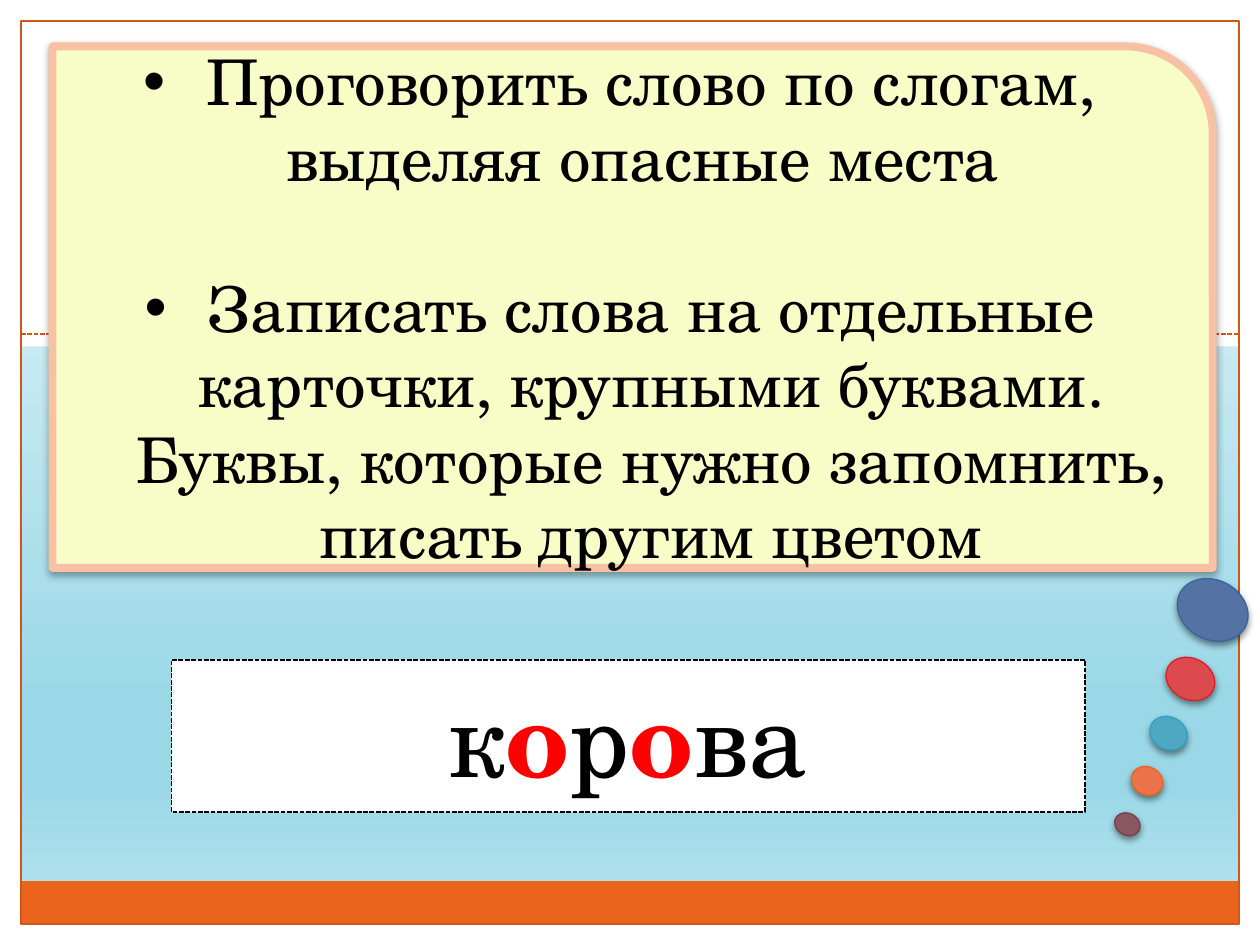
from lxml import etree
from pptx import Presentation
from pptx.dml.color import RGBColor
from pptx.enum import dml, shapes, text
from pptx.oxml import ns
from pptx.util import Pt

FONT = "TeX Gyre Schola"
HUES = {
    "white": "FFFFFF", "black": "000000", "red": "FF0000",
    "rust": "CF5818", "band": "EB641B", "cream": "F8FCC6", "peach": "F7C1A4",
}
SKY = [(0, "F4FBFC"), (74, "9BD8E7"), (83, "9BD8E7"), (100, "BCE5EF")]
# left, top, width, height, fill, line
DOTS = [
    (38, 0, 34, 42, "5572A4", "39639D"),
    (30.5, 46, 23.5, 29, "DC4A4D", "DA1F28"),
    (20.5, 80.5, 18.5, 22, "4FA8C3", "2DA2BF"),
    (9.5, 109.5, 16, 18.5, "EC7349", "EB641B"),
    (0, 136, 12.5, 15, "885760", "7D3C4A"),
]
TIPS = [
    "Проговорить слово по слогам, выделяя опасные места ",
    "Записать слова на отдельные карточки, крупными буквами. "
    "Буквы, которые нужно запомнить, писать другим цветом",
]
WORD = [("к", False), ("о", True), ("р", False), ("о", True), ("ва", False)]
KIND = shapes.MSO_SHAPE


def rgb(hue):
    return RGBColor.from_string(HUES.get(hue, hue))


def node(parent, tag, **attrs):
    return etree.SubElement(parent, ns.qn(tag), {k: str(v) for k, v in attrs.items()})


def stroke(line, hue, width, dash=False):
    line.color.rgb = rgb(hue)
    line.width = Pt(width)
    if dash:
        line.dash_style = dml.MSO_LINE.SQUARE_DOT


def draw(host, kind, box, fill=None, line=None):
    """Add a shape; line holds hue, width and optionally a dash flag."""
    shape = host.add_shape(kind, *map(Pt, box))
    shape.shadow.inherit = False
    if fill:
        shape.fill.solid()
        shape.fill.fore_color.rgb = rgb(fill)
    else:
        shape.fill.background()
    if line:
        stroke(shape.line, *line)
    else:
        shape.line.fill.background()
    return shape


def shade(shape, alpha):
    """Drop a soft shadow straight down; alpha is in percent."""
    fx = shape._element.spPr.find(ns.qn("a:effectLst"))
    drop = node(fx, "a:outerShdw", blurRad=Pt(4), dist=Pt(2), dir=5400000, rotWithShape=0)
    tint = node(drop, "a:srgbClr", val=HUES["black"])
    node(tint, "a:alpha", val=alpha * 1000)


def style(run, size, hue="black", bold=False):
    run.font.name = FONT
    run.font.size = Pt(size)
    run.font.bold = bold
    run.font.color.rgb = rgb(hue)


def paint_sky(slide):
    fill = slide.background.fill
    fill.gradient()
    fill.gradient_angle = 270
    stops = next(slide._element.iter(ns.qn("a:gsLst")))
    for stop in list(stops):
        stops.remove(stop)
    for pos, hue in SKY:
        node(node(stops, "a:gs", pos=pos * 1000), "a:srgbClr", val=hue)


def add_frame(slide, box):
    left, top, width, height = box
    host, edge = slide.shapes, 12
    right, base = left + width, top + height
    for strip in [
        (left, base - edge, width, edge),
        (right - edge, top, edge, height),
        (left, top, edge, height),
        (left, top, width, 198),
    ]:
        draw(host, KIND.RECTANGLE, strip, "white")
    inner = width - 2 * edge
    draw(host, KIND.RECTANGLE, (left + edge, base - edge - 24.5, inner, 24.5), "band")
    rule = host.add_connector(
        shapes.MSO_CONNECTOR.STRAIGHT,
        Pt(left + edge), Pt(top + 191), Pt(right - edge), Pt(top + 191))
    stroke(rule.line, "rust", 0.9, True)
    node(rule._element.spPr, "a:effectLst")
    rim = (left + edge, top + edge, inner, height - 2 * edge)
    draw(host, KIND.RECTANGLE, rim, line=("rust", 0.75))


def add_tips(slide, box):
    card = draw(slide.shapes, KIND.ROUND_1_RECTANGLE, box, "cream", ("peach", 4.5))
    shade(card, 35)
    frame = card.text_frame
    frame.word_wrap = True
    frame.vertical_anchor = text.MSO_ANCHOR.MIDDLE
    frame.text = "\n".join(TIPS)
    for para in frame.paragraphs:
        para.alignment = text.PP_ALIGN.CENTER
        props = para._p.get_or_add_pPr()
        props.set("marL", str(Pt(36)))
        props.set("indent", str(-Pt(36)))
        node(props, "a:buFont", typeface="Arial")
        node(props, "a:buChar", char="•")
        style(para.runs[0], 36)
    frame.paragraphs[1].space_before = Pt(43)


def add_dots(slide, box):
    left, top = box[:2]
    group = slide.shapes.add_group_shape()
    for x, y, width, height, fill, line in DOTS:
        spot = (left + x, top + y, width, height)
        dot = draw(group.shapes, KIND.FLOWCHART_CONNECTOR, spot, fill, (line, 0.75))
        dot.rotation = 297.6
        shade(dot, 45)


def add_word(slide, box):
    card = draw(slide.shapes, KIND.RECTANGLE, box, "white", ("black", 0.9, True))
    frame = card.text_frame
    frame.word_wrap = True
    frame.vertical_anchor = text.MSO_ANCHOR.MIDDLE
    para = frame.paragraphs[0]
    para.alignment = text.PP_ALIGN.CENTER
    for part, risky in WORD:
        run = para.add_run()
        run.text = part
        style(run, 60, "red" if risky else "black", risky)


def main():
    deck = Presentation()
    deck.slide_width, deck.slide_height = Pt(720), Pt(540)
    slide = deck.slides.add_slide(deck.slide_layouts[6])
    paint_sky(slide)
    add_frame(slide, (0, 0, 720, 540))
    add_tips(slide, (30, 26.5, 663, 298))
    add_dots(slide, (638, 327.5, 72, 151))
    add_word(slide, (98, 377, 522, 87))
    deck.save("out.pptx")


if __name__ == "__main__":
    main()
